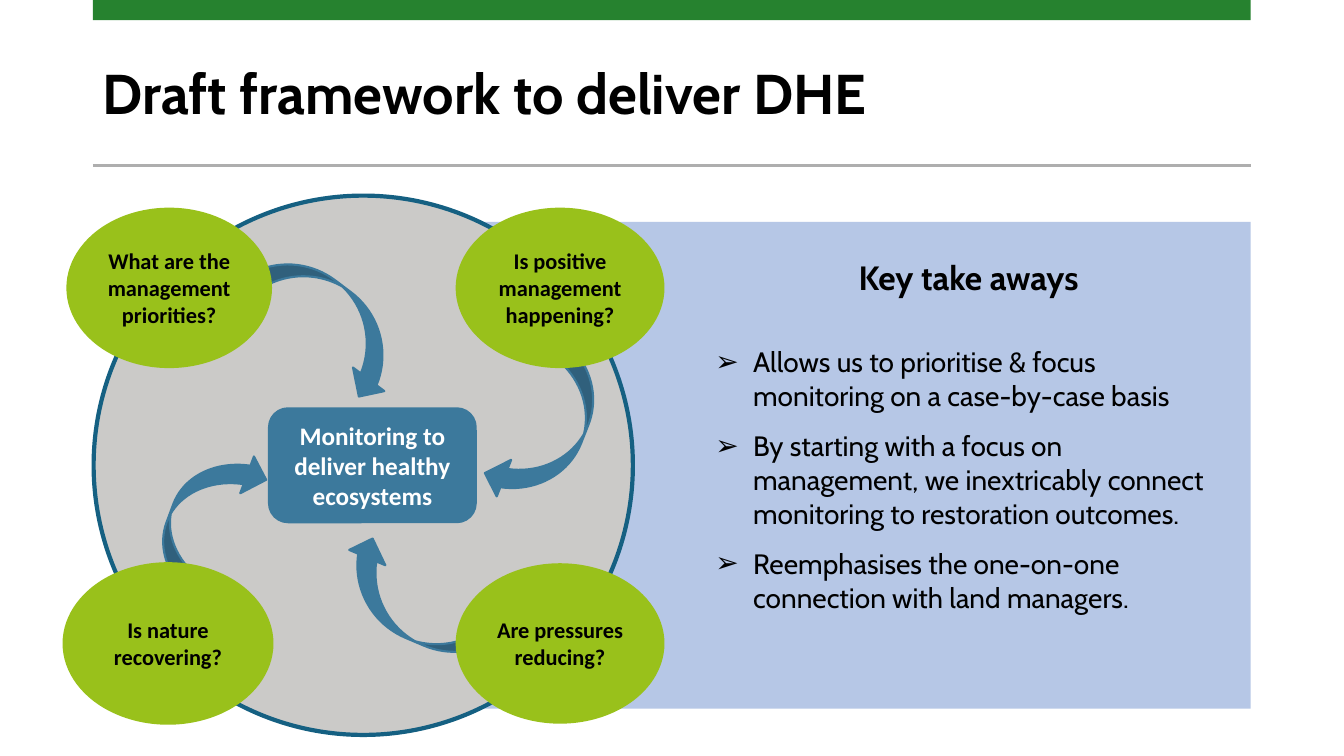
from dataclasses import dataclass
from typing import Any

from lxml import etree
from pptx import Presentation
from pptx import util as u
from pptx.dml.color import RGBColor
from pptx.enum import shapes, text
from pptx.oxml import ns

BLACK = RGBColor(0x00, 0x00, 0x00)
WHITE = RGBColor(0xFF, 0xFF, 0xFF)
GREEN = RGBColor(0x26, 0x82, 0x2F)
LIME = RGBColor(0x99, 0xC1, 0x1B)
PANEL_BLUE = RGBColor(0xB6, 0xC7, 0xE6)
STEEL_BLUE = RGBColor(0x3C, 0x79, 0x9C)
RING_BLUE = RGBColor(0x15, 0x60, 0x82)
DISC_GREY = RGBColor(0xCB, 0xCA, 0xC8)
RULE_GREY = RGBColor(0xAE, 0xAE, 0xAE)

MARGIN, CONTENT_WIDTH = 2.34, 29.18
RULE_TOP = 4.17
ARROW_HEIGHT = 1.98
QUESTION_HEIGHT = 3.99

TITLE_FONT = {"name": "Cabin", "size": u.Pt(40), "bold": True}
HEADING_FONT = {"name": "Cabin", "size": u.Pt(24), "bold": True}
BULLET_FONT = {"name": "Cabin", "size": u.Pt(20), "bold": False}
HUB_FONT = {"name": "Calibri", "size": u.Pt(18), "bold": True}
QUESTION_FONT = {"name": "Calibri", "size": u.Pt(16), "bold": True}

TAKEAWAYS = (
    "Allows us to prioritise & focus monitoring on a case-by-case basis",
    "By starting with a focus on management, we inextricably connect "
    "monitoring to restoration outcomes.",
    "Reemphasises the one-on-one connection with land managers.",
)


@dataclass(frozen=True)
class Box:
    """A frame in centimetres."""
    left: float
    top: float
    width: float
    height: float

    def lengths(self) -> tuple[u.Cm, ...]:
        return tuple(map(u.Cm, (self.left, self.top, self.width, self.height)))


@dataclass(frozen=True)
class Step:
    """A question and the curved arrow leading from it to the hub."""
    question: str
    left: float
    top: float
    arrow_left: float
    arrow_top: float
    arrow_width: float
    arrow_turn: float
    width: float = 5.21
    outline: float = 1.5


STEPS = (
    Step("Is positive management happening?", 11.51, 5.26, 11.56, 9.7, 4.42, 111.6),
    Step("Is nature recovering?", 1.63, 14.22, 3.25, 12.17, 4.01, 290.4, outline=3),
    Step("Are pressures reducing?", 11.51, 14.22, 8.36, 14.22, 4.72, 203),
    Step("What are the management priorities?", 1.7, 5.26, 5.79, 7.09, 4.72, 37,
         width=5.13),
)


def add_filled(parent: Any, kind: shapes.MSO_SHAPE, box: Box, fill: RGBColor,
               line: RGBColor | None = None, weight: float = 1.5) -> Any:
    shape = parent.add_shape(kind, *box.lengths())
    shape.shadow.inherit = False
    shape.fill.solid()
    shape.fill.fore_color.rgb = fill
    if line is None:
        shape.line.fill.background()
    else:
        shape.line.color.rgb = line
        shape.line.width = u.Pt(weight)
    return shape


def write(paragraph: Any, words: str, font: dict[str, Any], color: RGBColor,
          align: text.PP_ALIGN = text.PP_ALIGN.CENTER) -> None:
    paragraph.text = words
    paragraph.alignment = align
    for key, value in font.items():
        setattr(paragraph.font, key, value)
    paragraph.font.color.rgb = color


def label(shape: Any, words: str, font: dict[str, Any], color: RGBColor) -> None:
    shape.text_frame.word_wrap = True
    shape.text_frame.vertical_anchor = text.MSO_ANCHOR.MIDDLE
    write(shape.text_frame.paragraphs[0], words, font, color)


def add_bullet(paragraph: Any) -> None:
    properties = paragraph._p.get_or_add_pPr()
    properties.set("marL", str(u.Cm(0.95)))
    properties.set("indent", str(-u.Cm(0.95)))
    etree.SubElement(properties, ns.qn("a:buFont"), typeface="Arial")
    etree.SubElement(properties, ns.qn("a:buChar"), char="➢")


def add_header(slide: Any) -> None:
    rule = slide.shapes.add_connector(
        shapes.MSO_CONNECTOR.STRAIGHT, u.Cm(MARGIN), u.Cm(RULE_TOP),
        u.Cm(MARGIN + CONTENT_WIDTH), u.Cm(RULE_TOP))
    rule.line.color.rgb = RULE_GREY
    rule.line.width = u.Pt(1.5)
    etree.SubElement(rule._element.spPr, ns.qn("a:effectLst"))
    add_filled(slide.shapes, shapes.MSO_SHAPE.RECTANGLE,
               Box(MARGIN, 0, CONTENT_WIDTH, 0.51), GREEN)
    title = slide.shapes.add_textbox(*Box(MARGIN, 0.94, CONTENT_WIDTH, 3).lengths())
    label(title, "Draft framework to deliver DHE", TITLE_FONT, BLACK)
    heading = title.text_frame.paragraphs[0]
    heading.alignment = text.PP_ALIGN.LEFT
    heading.line_spacing = 0.9


def add_framework(slide: Any) -> None:
    framework = slide.shapes.add_group_shape().shapes
    add_filled(framework, shapes.MSO_SHAPE.OVAL, Box(2.36, 4.93, 13.59, 13.59),
               DISC_GREY, RING_BLUE, 3)
    hub = add_filled(framework, shapes.MSO_SHAPE.ROUNDED_RECTANGLE,
                     Box(6.78, 10.29, 5.21, 2.87), STEEL_BLUE, STEEL_BLUE)
    label(hub, "Monitoring to deliver healthy ecosystems", HUB_FONT, WHITE)
    for step in STEPS:
        arrow = add_filled(
            framework, shapes.MSO_SHAPE.CURVED_DOWN_ARROW,
            Box(step.arrow_left, step.arrow_top, step.arrow_width, ARROW_HEIGHT),
            STEEL_BLUE, STEEL_BLUE)
        arrow.rotation = step.arrow_turn
        question = add_filled(
            framework, shapes.MSO_SHAPE.OVAL,
            Box(step.left, step.top, step.width, QUESTION_HEIGHT),
            LIME, LIME, step.outline)
        label(question, step.question, QUESTION_FONT, BLACK)


def add_takeaways(slide: Any) -> None:
    frame = slide.shapes.add_textbox(*Box(17.78, 6.35, 13.26, 10.08).lengths()).text_frame
    frame.word_wrap = True
    write(frame.paragraphs[0], "Key take aways", HEADING_FONT, BLACK)
    for index, takeaway in enumerate(TAKEAWAYS):
        paragraph = frame.add_paragraph()
        paragraph.space_before = u.Pt(12 if index else 34)
        add_bullet(paragraph)
        write(paragraph, takeaway, BULLET_FONT, BLACK, text.PP_ALIGN.LEFT)


def main() -> None:
    deck = Presentation()
    deck.slide_width, deck.slide_height = u.Cm(33.87), u.Cm(19.05)
    slide = deck.slides.add_slide(deck.slide_layouts[6])
    add_filled(slide.shapes, shapes.MSO_SHAPE.RECTANGLE,
               Box(8.53, 5.59, 22.99, 12.27), PANEL_BLUE)
    add_header(slide)
    add_framework(slide)
    add_takeaways(slide)
    deck.save("out.pptx")


if __name__ == "__main__":
    main()
